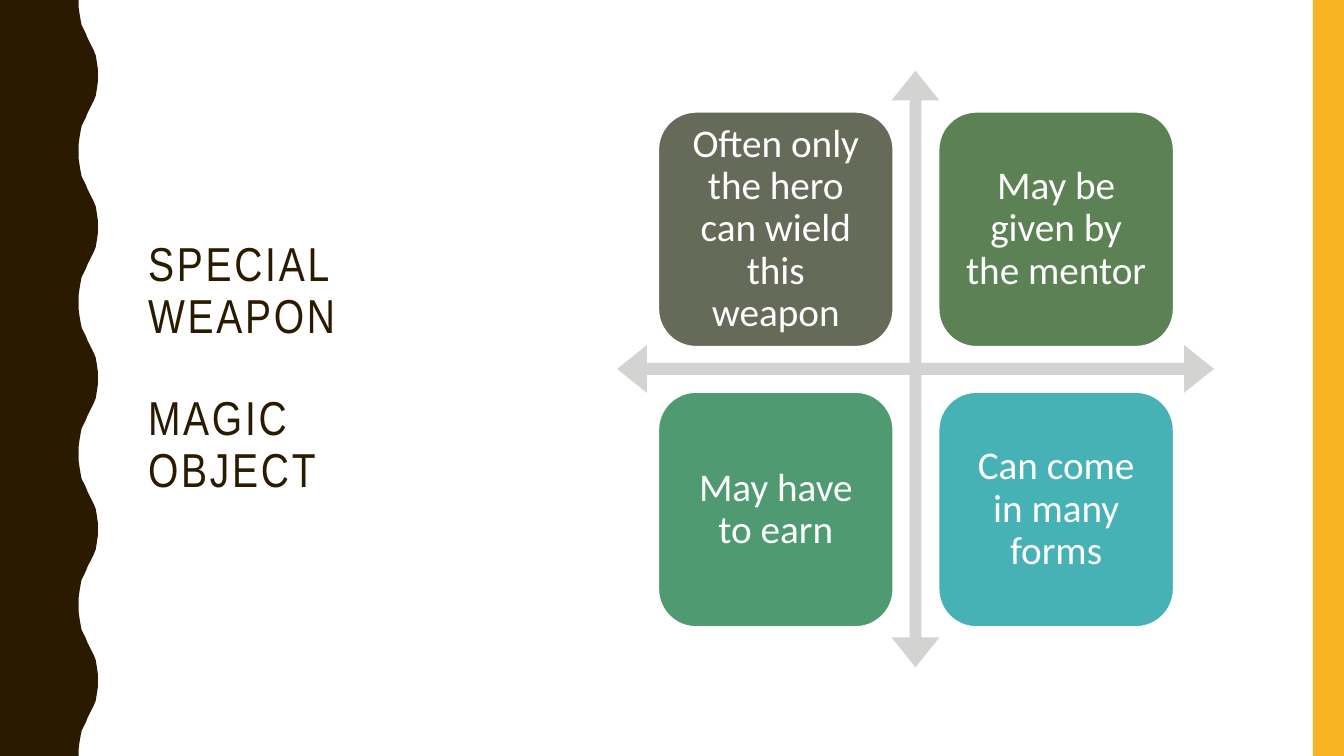
from dataclasses import dataclass

from pptx import Presentation
from pptx.dml.color import RGBColor
from pptx.enum.shapes import MSO_SHAPE as Preset
from pptx.enum.text import MSO_ANCHOR as Anchor, PP_ALIGN as Align
from pptx.shapes.autoshape import Shape
from pptx.slide import Slide
from pptx.text.text import TextFrame, _Paragraph as Paragraph
from pptx.util import Inches, Pt

SLIDE_WIDTH, SLIDE_HEIGHT = 13.33, 7.5
BROWN, YELLOW, GREY, WHITE = "2A1A00", "F8B323", "D3D4D1", "FFFFFF"

# Half of one wave: (x, y) from trough to crest
WAVE_RISE = [
    (0.78, 0), (0.78, 0.07), (0.79, 0.14), (0.8, 0.2), (0.81, 0.25), (0.83, 0.29),
    (0.85, 0.33), (0.87, 0.38), (0.89, 0.42), (0.91, 0.46), (0.93, 0.5),
    (0.95, 0.55), (0.96, 0.61), (0.97, 0.68), (0.97, 0.75),
]
WAVE_LENGTH, WAVE_COUNT = 1.5, 5

MATRIX_LEFT, MATRIX_TOP, MATRIX_SIZE = 6.12, 0.7, 5.92
TILE_OFFSET, TILE_SIZE, TILE_PITCH = 0.39, 2.37, 2.78


@dataclass(frozen=True)
class Tile:
    column: int
    row: int
    color: str
    text: str


TILES = [
    Tile(0, 0, "656A59", "Often only the hero can wield this weapon"),
    Tile(1, 0, "5B8155", "May be given by the mentor"),
    Tile(0, 1, "4F9A70", "May have to earn"),
    Tile(1, 1, "46B2B5", "Can come in many forms"),
]


def rgb(color: str) -> RGBColor:
    return RGBColor.from_string(color)


def paint(shape: Shape, color: str) -> None:
    shape.shadow.inherit = False
    shape.fill.solid()
    shape.fill.fore_color.rgb = rgb(color)
    shape.line.fill.background()


def add_preset(slide: Slide, preset: Preset, left: float, top: float,
               width: float, height: float, color: str) -> Shape:
    shape = slide.shapes.add_shape(
        preset, Inches(left), Inches(top), Inches(width), Inches(height))
    paint(shape, color)
    return shape


def set_up_frame(frame: TextFrame, inset_x: float, inset_y: float) -> None:
    frame.word_wrap = True
    frame.vertical_anchor = Anchor.MIDDLE
    frame.margin_left = frame.margin_right = Inches(inset_x)
    frame.margin_top = frame.margin_bottom = Inches(inset_y)


def add_run(paragraph: Paragraph, text: str, font: str, size: float,
            color: str, spacing: float = 0) -> None:
    paragraph.line_spacing = 0.9
    run = paragraph.add_run()
    run.text = text
    run.font.name = font
    run.font.size = Pt(size)
    run.font.color.rgb = rgb(color)
    if spacing:
        run.font._element.set("spc", str(round(spacing * 100)))


def add_wave(slide: Slide) -> None:
    fall = [(x, WAVE_LENGTH - y) for x, y in reversed(WAVE_RISE[1:-1])]
    edge = [(x, y + index * WAVE_LENGTH)
            for index in range(WAVE_COUNT) for x, y in WAVE_RISE + fall]
    outline = edge + [(WAVE_RISE[0][0], SLIDE_HEIGHT), (0, SLIDE_HEIGHT)]
    builder = slide.shapes.build_freeform(0, 0)
    builder.add_line_segments([(Inches(x), Inches(y)) for x, y in outline], close=True)
    paint(builder.convert_to_shape(), BROWN)


def add_title(slide: Slide) -> None:
    box = slide.shapes.add_textbox(Inches(1.37), Inches(0.7), Inches(3.7), Inches(5.92))
    frame = box.text_frame
    set_up_frame(frame, 0.1, 0.05)
    weapon = frame.paragraphs[0]
    add_run(weapon, "SPECIAL WEAPON", "Arial Narrow", 34, BROWN, 2)
    magic = frame.add_paragraph()
    magic.space_before = Pt(36.5)
    add_run(magic, "MAGIC ", "Arial Narrow", 34, BROWN, 2)
    magic.add_line_break()
    add_run(magic, "OBJECT", "Arial Narrow", 34, BROWN, 2)


def add_tile(slide: Slide, tile: Tile) -> None:
    left = MATRIX_LEFT + TILE_OFFSET + tile.column * TILE_PITCH
    top = MATRIX_TOP + TILE_OFFSET + tile.row * TILE_PITCH
    shape = add_preset(slide, Preset.ROUNDED_RECTANGLE, left, top,
                       TILE_SIZE, TILE_SIZE, tile.color)
    shape.line.color.rgb = rgb(WHITE)
    shape.line.width = Pt(4)
    set_up_frame(shape.text_frame, 0.12, 0.12)
    paragraph = shape.text_frame.paragraphs[0]
    paragraph.alignment = Align.CENTER
    add_run(paragraph, tile.text, "Calibri", 28, WHITE)


def main() -> None:
    presentation = Presentation()
    presentation.slide_width = Inches(SLIDE_WIDTH)
    presentation.slide_height = Inches(SLIDE_HEIGHT)
    slide = presentation.slides.add_slide(presentation.slide_layouts[6])

    # Side decoration
    add_wave(slide)
    add_preset(slide, Preset.RECTANGLE, 13.02, 0, 0.31, SLIDE_HEIGHT, YELLOW)

    # Title
    add_title(slide)

    # Matrix: crossed arrows, then the four tiles
    arrows = add_preset(slide, Preset.QUAD_ARROW, MATRIX_LEFT, MATRIX_TOP,
                        MATRIX_SIZE, MATRIX_SIZE, GREY)
    for index, value in enumerate((0.02, 0.04, 0.05)):
        arrows.adjustments[index] = value
    for tile in TILES:
        add_tile(slide, tile)

    presentation.save("out.pptx")


if __name__ == "__main__":
    main()
